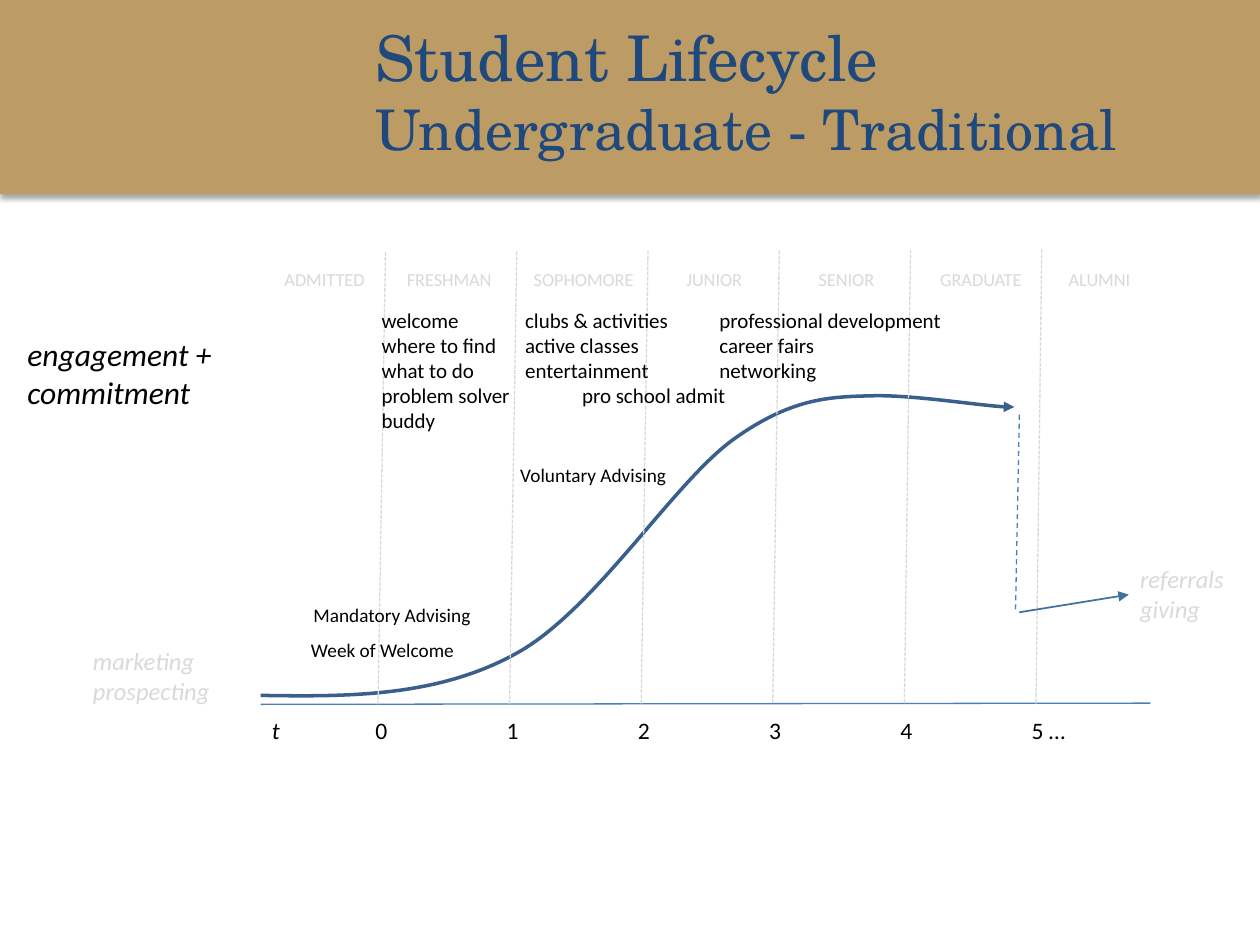
from lxml.etree import SubElement
from pptx import Presentation
from pptx.dml.color import RGBColor
from pptx.enum.dml import MSO_LINE
from pptx.enum.shapes import MSO_CONNECTOR, MSO_SHAPE
from pptx.enum.text import MSO_ANCHOR, MSO_AUTO_SIZE, PP_ALIGN
from pptx.oxml.ns import qn
from pptx.util import Pt

COLORS = {"band": "BC9B65", "title": "1F497D", "curve": "3A5F8C", "axis": "4B7EBC",
          "rise": "41719C", "pale": "D9D9D9", "text": "000000", "shade": "000000"}
STAGES = [("ADMITTED", 37, 61), ("FRESHMAN", 108.4, 64), ("SOPHOMORE", 185.4, 73),
          ("JUNIOR", 259.6, 47), ("SENIOR", 335.2, 47), ("GRADUATE", 412.6, 63),
          ("ALUMNI", 479.6, 50)]
CURVE = [(0, 255.4), (50.4, 256.2), (100.8, 256.2), (145.5, 231.7),
         (190.8, 207.2), (236.2, 133), (270.8, 108.6),
         (305.3, 84.1), (327.6, 84.8), (352.1, 84.1),
         (375.9, 84.1), (420.5, 91.3), (430.6, 90.6)]
STEP = 75


def color(name):
    return RGBColor.from_string(COLORS[name])


def style(para, size, tint="text", face="Calibri", italic=False):
    font = para.font
    font.size, font.name, font.italic = Pt(size), face, italic
    font.color.rgb = color(tint)


def label(slide, box, lines, size, tint="text", italic=False, wrap=False):
    shape = slide.shapes.add_textbox(*map(Pt, box))
    frame = shape.text_frame
    frame.word_wrap = wrap
    frame.auto_size = MSO_AUTO_SIZE.SHAPE_TO_FIT_TEXT
    frame.text = "\n".join(lines)
    for para in frame.paragraphs:
        style(para, size, tint, italic=italic)
    return frame


def arrow(shape):
    SubElement(shape.line._get_or_add_ln(), qn("a:tailEnd"), type="triangle")


def rule(slide, start, end, tint, width=0.75, dash=None):
    line = slide.shapes.add_connector(MSO_CONNECTOR.STRAIGHT, *map(Pt, start + end))
    line.line.color.rgb = color(tint)
    line.line.width = Pt(width)
    if dash:
        line.line.dash_style = dash
    SubElement(line._element.spPr, qn("a:effectLst"))
    return line


def header(slide, box):
    band = slide.shapes.add_shape(MSO_SHAPE.RECTANGLE, *map(Pt, box))
    band.fill.solid()
    band.fill.fore_color.rgb = color("band")
    band.line.fill.background()
    effects = SubElement(band._element.spPr, qn("a:effectLst"))
    shade = SubElement(effects, qn("a:outerShdw"), blurRad=str(Pt(3.1)),
                       dist=str(Pt(1.8)), dir="5400000", rotWithShape="0")
    tone = SubElement(shade, qn("a:srgbClr"), val=COLORS["shade"])
    SubElement(tone, qn("a:alpha"), val="35000")

    x, y, w, h = box
    title = slide.shapes.title
    band._element.addnext(title._element)
    title.left, title.top = Pt(x + 207.4), Pt(y + 7.2)
    title.width, title.height = Pt(522), Pt(90)
    frame = title.text_frame
    frame.word_wrap = True
    frame.auto_size = MSO_AUTO_SIZE.NONE
    frame.vertical_anchor = MSO_ANCHOR.MIDDLE
    frame.text = "Student Lifecycle\nUndergraduate - Traditional"
    for para, size in zip(frame.paragraphs, (36, 32)):
        para.alignment = PP_ALIGN.LEFT
        style(para, size, "title", "TeX Gyre Schola")


def curve(slide, x, y):
    """Draw the engagement curve as cubic segments of three points each."""
    points = [(Pt(x + dx), Pt(y + dy)) for dx, dy in CURVE]
    build = slide.shapes.build_freeform(*points[0])
    build.add_line_segments(points[1:], close=False)
    shape = build.convert_to_shape()
    shape.shadow.inherit = False
    shape.fill.background()
    shape.line.color.rgb = color("curve")
    shape.line.width = Pt(2)
    arrow(shape)
    route = next(shape._element.iter(qn("a:path")))
    steps = route.findall(qn("a:lnTo"))
    for i in range(0, len(steps), 3):
        bend = SubElement(route, qn("a:cubicBezTo"))
        for step in steps[i:i + 3]:
            bend.append(step[0])
            route.remove(step)


def chart(slide, box):
    x, y, w, h = box
    base = y + h
    curve(slide, x, y)
    rule(slide, (x, base), (x + w, base - 0.7), "axis")
    for i in range(6):
        rule(slide, (x + 71.3 + i * STEP, y + 2 - i * 0.3),
             (x + 67 + i * (STEP + 0.2), base), "pale", dash=MSO_LINE.SQUARE_DOT)
        last = i == 5
        label(slide, (x + 58.4 + i * STEP, base + 3, 34 if last else 21.6, 24),
              ["5 …" if last else str(i)], 13.5)
    label(slide, (x - 0.7, base + 3, 19.4, 24), ["t"], 13.5, italic=True)
    for name, mid, wide in STAGES:
        label(slide, (x + mid - wide / 2, y + 7.8, wide, 20), [name], 10.5, "pale")
    arrow(rule(slide, (x + 433.5, y + 207.9), (x + 496, y + 197.8), "rise", 1))
    rule(slide, (x + 433.5, y + 95), (x + 431.3, y + 207.9), "axis", dash=MSO_LINE.DASH)


def phases(slide, box):
    x, y, w, h = box
    label(slide, (x - 140.4, y + 46, 127.4, 51), ["engagement +", "commitment"],
          18, italic=True, wrap=True)
    label(slide, (x + 495.4, y + 177, 62.6, 41), ["referrals", "giving"],
          14, "pale", True)
    label(slide, (x - 103, y + 223.8, 82, 41), ["marketing", "prospecting"],
          14, "pale", True)


def notes(slide, box):
    """Place the advising labels and the activity lists over the chart."""
    x, y, w, h = box
    for dx, dy, wide, text in [(21.6, 219.4, 98, "Week of Welcome"),
                               (23, 199.3, 105, "Mandatory Advising"),
                               (141.2, 119.4, 98.6, "Voluntary Advising")]:
        label(slide, (x + dx, y + dy, wide, 21), [text], 11)
    top = y + 30
    clubs = label(slide, (x + 144, top, 152.6, 65.5),
                  ["clubs & activities", "active classes", "entertainment",
                   "pro school admit"], 12, wrap=True)
    clubs.paragraphs[-1]._p.get_or_add_pPr().set("marL", str(Pt(32.5)))
    label(slide, (x + 255, top, 152.6, 51),
          ["professional development", "career fairs", "networking"], 12, wrap=True)
    label(slide, (x + 62, top, 93, 80),
          ["welcome", "where to find", "what to do", "problem solver", "buddy"],
          12, wrap=True)


def main():
    deck = Presentation()
    deck.slide_width, deck.slide_height = Pt(720), Pt(540)
    slide = deck.slides.add_slide(deck.slide_layouts[5])
    header(slide, (0, -0.7, 720, 111.6))
    plot = (149, 142, 508.3, 260.5)
    for draw in (chart, phases, notes):
        draw(slide, plot)
    deck.save("out.pptx")


if __name__ == "__main__":
    main()
